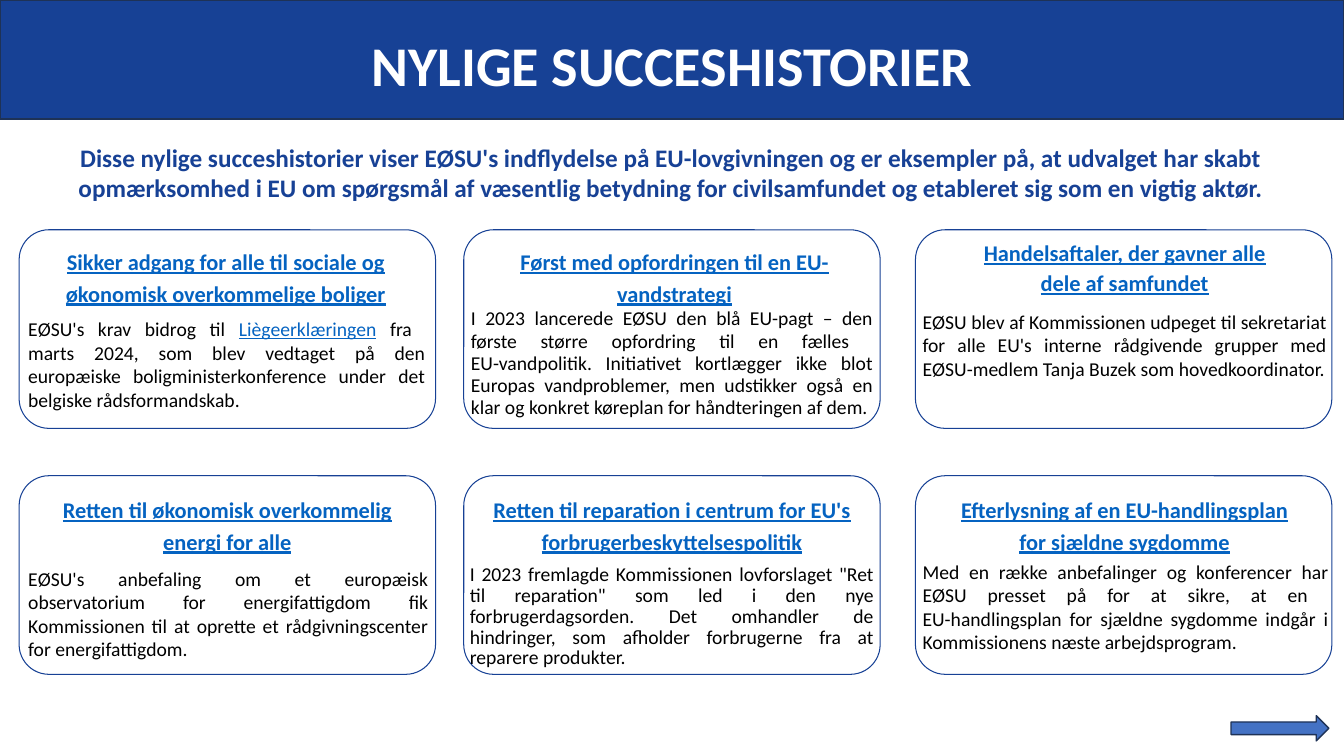
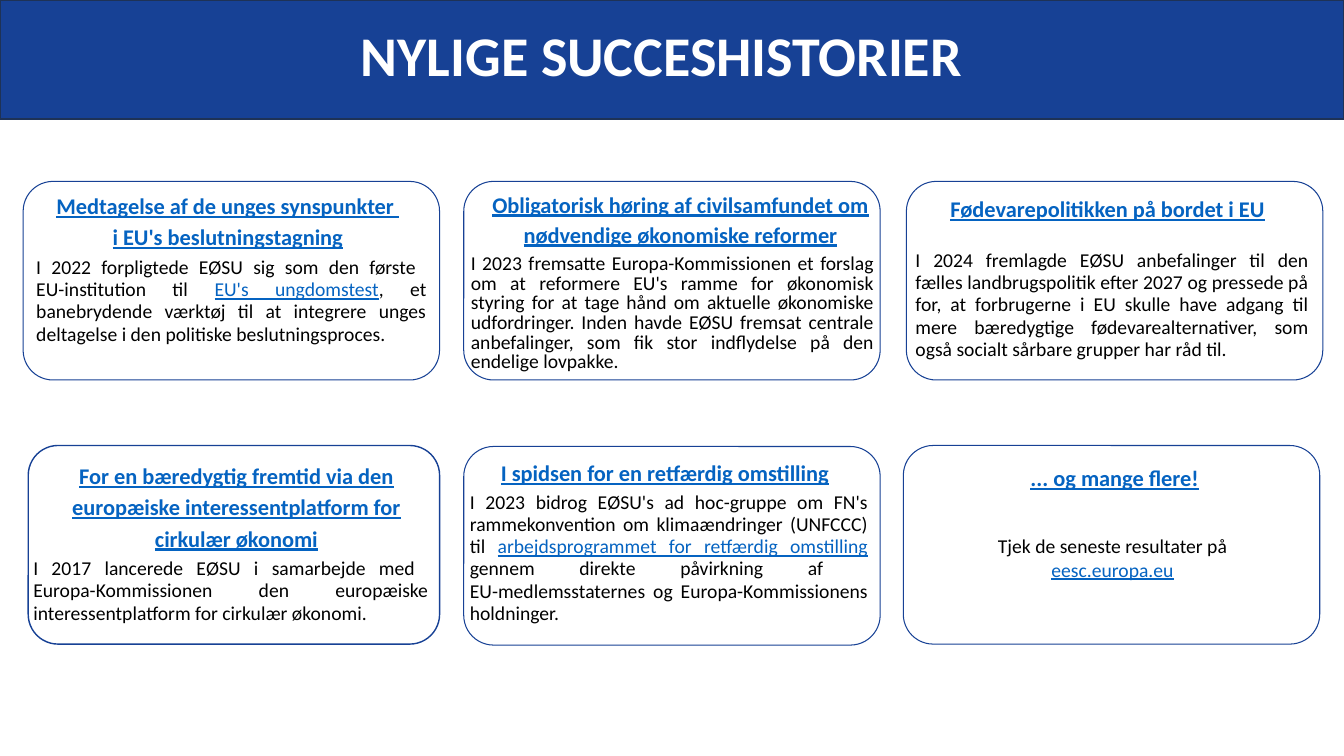
"""Build two slides of recent success stories as cards under a title band."""
from pptx import Presentation
from pptx.dml.color import RGBColor
from pptx.enum.shapes import MSO_SHAPE as Shape
from pptx.enum.text import MSO_ANCHOR as Anchor, MSO_AUTO_SIZE as Auto, PP_ALIGN as Align
from pptx.util import Inches, Pt

HUES = {"navy": "174195", "edge": "1E3256", "link": "0563C1",
        "arrow": "4472C4", "white": "FFFFFF", "black": "000000"}
FONT = "Calibri"
WIDE, HIGH = 13.33, 7.5
CARD = 4.13, 1.97

FIRST = [
    dict(at=(0.19, 2.28),
         head="Sikker adgang for alle til sociale og økonomisk overkommelige boliger",
         top=(0.03, 0.14, 4.04, 0.61),
         body="EØSU's krav bidrog til |Liègeerklæringen| fra \nmarts 2024, som blev vedtaget "
              "på den europæiske boligministerkonference under det belgiske rådsformandskab.",
         low=(0.09, 0.86, 3.94, 0.94), gap=17),
    dict(at=(4.6, 2.28),
         head="Først med opfordringen til en EU-vandstrategi",
         top=(0.17, 0.14, 3.84, 0.6),
         body="I 2023 lancerede EØSU den blå EU-pagt – den første større opfordring til en "
              "fælles \nEU-vandpolitik. Initiativet kortlægger ikke blot Europas vandproblemer, "
              "men udstikker også en klar og konkret køreplan for håndteringen af dem.",
         low=(0.07, 0.77, 3.99, 1.12)),
    dict(at=(9.08, 2.28),
         head="Handelsaftaler, der gavner alle dele af samfundet",
         top=(0.51, 0.06, 3.13, 0.58), lead=21.5,
         body="EØSU blev af Kommissionen udpeget til sekretariat for alle EU's interne "
              "rådgivende grupper med EØSU-medlem Tanja Buzek som hovedkoordinator.",
         low=(0.07, 0.79, 4.01, 0.95), gap=16.8),
    dict(at=(0.19, 4.72),
         head="Retten til økonomisk overkommelig energi for alle",
         top=(0.25, 0.16, 3.63, 0.6),
         body="EØSU's anbefaling om et europæisk observatorium for energifattigdom fik "
              "Kommissionen til at oprette et rådgivningscenter for energifattigdom.",
         low=(0.09, 0.9, 3.97, 0.95), gap=16.8),
    dict(at=(4.6, 4.72),
         head="Retten til reparation i centrum for EU's forbrugerbeskyttelsespolitik",
         top=(0.02, 0.16, 4.09, 0.6),
         body="I 2023 fremlagde Kommissionen lovforslaget \"Ret til reparation\" som led i den "
              "nye forbrugerdagsorden. Det omhandler de hindringer, som afholder forbrugerne "
              "fra at reparere produkter.",
         low=(0.06, 0.88, 4.01, 1.05), gap=14.9),
    dict(at=(9.08, 4.72),
         head="Efterlysning af en EU-handlingsplan\nfor sjældne sygdomme",
         top=(-0.01, 0.16, 4.17, 0.6),
         body="Med en række anbefalinger og konferencer har EØSU presset på for at sikre, at en "
              "\nEU-handlingsplan for sjældne sygdomme indgår i Kommissionens næste "
              "arbejdsprogram.",
         low=(0.07, 0.83, 4.03, 0.95), gap=16.8),
]

NEXT = [
    dict(at=(0.23, 1.8),
         head="Medtagelse af de unges synspunkter \ni EU's beslutningstagning",
         top=(0.04, 0.06, 3.98, 0.6),
         body="I 2022 forpligtede EØSU sig som den første \nEU-institution til |EU's ungdomstest|, "
              "et banebrydende værktøj til at integrere unges deltagelse i den politiske "
              "beslutningsproces.",
         low=(0.13, 0.74, 3.87, 0.89)),
    dict(at=(4.6, 1.8),
         head="Obligatorisk høring af civilsamfundet om nødvendige økonomiske reformer",
         top=(0.15, 0.06, 4, 0.6), lead=21.5,
         body="I 2023 fremsatte Europa-Kommissionen et forslag om at reformere EU's ramme for "
              "økonomisk styring for at tage hånd om aktuelle økonomiske udfordringer. Inden "
              "havde EØSU fremsat centrale anbefalinger, som fik stor indflydelse på den "
              "endelige lovpakke.",
         low=(0.07, 0.73, 4, 1.18), gap=14),
    dict(at=(8.99, 1.8),
         head="Fødevarepolitikken på bordet i EU",
         top=(0.02, 0.09, 3.95, 0.29),
         body="I 2024 fremlagde EØSU anbefalinger til den fælles landbrugspolitik efter 2027 og "
              "pressede på for, at forbrugerne i EU skulle have adgang til mere bæredygtige "
              "fødevarealternativer, som også socialt sårbare grupper har råd til.",
         low=(0.09, 0.67, 3.9, 1.12)),
    dict(at=(0.28, 4.42), size=(4.08, 1.97), line=1,
         head="For en bæredygtig fremtid via den europæiske interessentplatform for "
              "cirkulær økonomi",
         top=(0.04, 0.12, 4.05, 0.91),
         body="I 2017 lancerede EØSU i samarbejde med \nEuropa-Kommissionen den europæiske "
              "interessentplatform for cirkulær økonomi.",
         low=(0.05, 1.11, 3.92, 0.67)),
    dict(at=(4.6, 4.43),
         head="I spidsen for en retfærdig omstilling",
         top=(0.09, 0.08, 3.81, 0.29),
         body="I 2023 bidrog EØSU's ad hoc-gruppe om FN's rammekonvention om klimaændringer "
              "(UNFCCC) til |arbejdsprogrammet for retfærdig omstilling| gennem direkte "
              "påvirkning af \nEU-medlemsstaternes og Europa-Kommissionens holdninger.",
         low=(0.06, 0.44, 3.95, 1.36)),
    dict(at=(8.96, 4.42),
         head="... og mange flere!",
         top=(0.95, 0.14, 2.29, 0.3),
         body="Tjek de seneste resultater på |eesc.europa.eu|",
         low=(0.74, 0.88, 2.67, 0.47), gap=16.8, side=Align.CENTER),
]


def hue(name):
    return RGBColor.from_string(HUES[name])


def write(frame, text, size=14, color="black", bold=False, under=False,
          side=Align.CENTER, gap=None, inset=0):
    frame.word_wrap = True
    frame.auto_size = Auto.NONE
    frame.vertical_anchor = Anchor.TOP
    if inset is not None:
        frame.margin_left = frame.margin_right = Inches(inset)
        frame.margin_top = frame.margin_bottom = Inches(inset)
    para = frame.paragraphs[0]
    para.alignment = side
    if gap:
        para.line_spacing = Pt(gap)
    for spot, part in enumerate(text.split("|")):
        link = spot % 2 == 1
        for row, words in enumerate(part.split("\n")):
            if row:
                para.add_line_break()
            if not words:
                continue
            run = para.add_run()
            run.text = words
            font = run.font
            font.name, font.size, font.bold = FONT, Pt(size), bold
            font.underline = under or link
            font.color.rgb = hue("link" if link else color)


def label(slide, box, text, **style):
    area = slide.shapes.add_textbox(*map(Inches, box))
    write(area.text_frame, text, **style)


def block(slide, kind, box, fill=None, edge="edge", line=1):
    shape = slide.shapes.add_shape(kind, *map(Inches, box))
    shape.shadow.inherit = False
    if fill:
        shape.fill.solid()
        shape.fill.fore_color.rgb = hue(fill)
    else:
        shape.fill.background()
    shape.line.color.rgb = hue(edge)
    shape.line.width = Pt(line)
    return shape


def banner(slide, box):
    band = block(slide, Shape.RECTANGLE, (0, 0, WIDE, 1.18), "navy").element
    band.getparent().insert(2, band)
    title = slide.shapes.title
    title.left, title.top, title.width, title.height = map(Inches, box)
    write(title.text_frame, "NYLIGE SUCCESHISTORIER", size=40, color="white",
          bold=True, gap=33)


def card(slide, at, head, top, body, low, size=CARD, line=0.75,
         lead=22.4, gap=15.9, side=Align.JUSTIFY):
    left, high = at
    frame = block(slide, Shape.ROUNDED_RECTANGLE, (*at, *size), edge="navy", line=line)
    frame.adjustments[0] = 0.15

    def place(box):
        return left + box[0], high + box[1], box[2], box[3]

    label(slide, place(top), head, size=16, color="link", bold=True, under=True, gap=lead)
    label(slide, place(low), body, side=side, gap=gap)


def page(deck, title, cards):
    slide = deck.slides.add_slide(deck.slide_layouts[5])
    banner(slide, title)
    for item in cards:
        card(slide, **item)
    return slide


def main():
    deck = Presentation()
    deck.slide_width, deck.slide_height = Inches(WIDE), Inches(HIGH)
    slide = page(deck, (0, 0.51, WIDE, 0.51), FIRST)
    label(slide, (0.4, 1.36, 12.51, 0.71),
          "Disse nylige succeshistorier viser EØSU's indflydelse på EU-lovgivningen og er "
          "eksempler på, at udvalget har skabt opmærksomhed i EU om spørgsmål af væsentlig "
          "betydning for civilsamfundet og etableret sig som en vigtig aktør.",
          size=18, color="navy", bold=True, inset=None)
    block(slide, Shape.RIGHT_ARROW, (12.21, 7.1, 0.97, 0.25), "arrow")
    page(deck, (2.82, 0.41, 7.48, 0.5), NEXT)
    deck.save("out.pptx")


if __name__ == "__main__":
    main()
